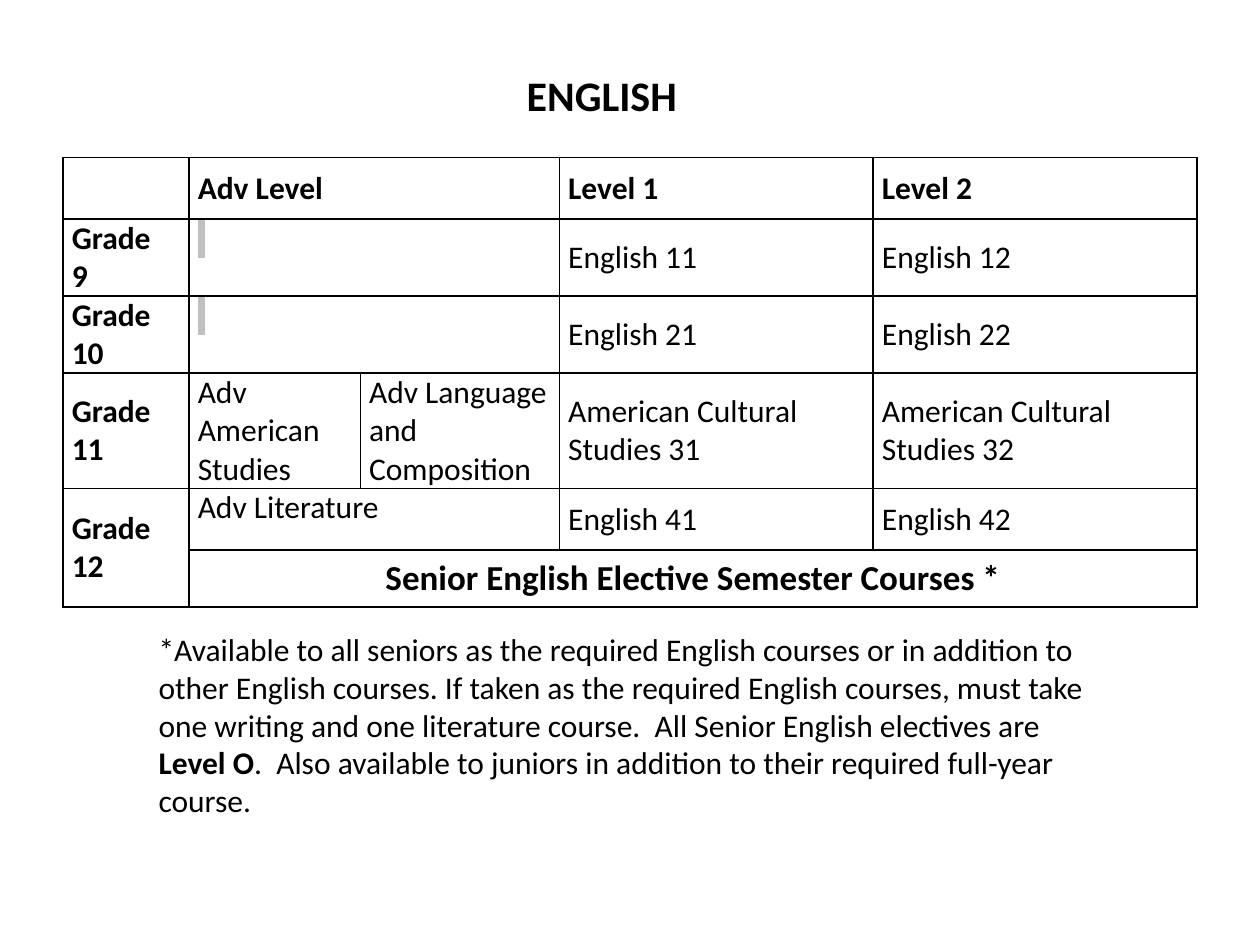
import pptx
import pptx.util
import pptx.dml.color
import pptx.enum.text
from lxml import etree

Inches, Pt = pptx.util.Inches, pptx.util.Pt
ALIGN, ANCHOR = pptx.enum.text.PP_ALIGN, pptx.enum.text.MSO_ANCHOR
DRAWING = "http://schemas.openxmlformats.org/drawingml/2006/main"

# Content
COLORS = {"ink": "000000", "marker": "C0C0C0"}
FONT = "Calibri"
TITLE = "ENGLISH"
MARKED = " "  # a highlighted blank for grades without advanced courses
ADVANCED_LITERATURE = "Adv Literature"
ELECTIVES = "Senior English Elective Semester Courses *"
COURSES = [
    ["", "Adv Level", None, "Level 1", "Level 2"],
    ["Grade  9", MARKED, None, "English 11", "English 12"],
    ["Grade 10", MARKED, None, "English 21", "English 22"],
    ["Grade 11", "Adv American Studies", "Adv Language and Composition",
     "American Cultural Studies 31", "American Cultural Studies 32"],
    ["Grade 12", ADVANCED_LITERATURE, None, "English 41", "English 42"],
    [None, ELECTIVES, None, None, None],
]
MERGES = [((row, 1), (row, 2)) for row in (0, 1, 2, 4)]
MERGES += [((4, 0), (5, 0)), ((5, 1), (5, 4))]
TOP_CELLS = (MARKED, ADVANCED_LITERATURE)
NOTE = [
    ("*Available to all seniors as the required English courses or in addition "
     "to other English courses. If taken as the required English courses, must "
     "take one writing and one literature course.  All Senior English electives are ", False),
    ("Level O", True),
    (".  Also available to juniors in addition to their required full-year course.", False),
]

# Layout in inches
COLUMNS = [1, 1.36, 1.58, 2.49, 2.57]
ROWS = [0.49, 0.46, 0.46, 0.9, 0.49, 0.45]
TABLE_LEFT, TABLE_TOP = 0.5, 1.25
TITLE_BOX = (4.08, 0.5, 1.58, 0.5)
NOTE_BOX = (1.16, 4.94, 7.69, 1.62)


def style(font, size, bold=None):
    font.name, font.size, font.bold = FONT, Pt(size), bold
    font.color.rgb = pptx.dml.color.RGBColor.from_string(COLORS["ink"])


def add_color(parent, tag, color):
    holder = etree.SubElement(parent, f"{{{DRAWING}}}{tag}")
    etree.SubElement(holder, f"{{{DRAWING}}}srgbClr", val=color)
    return holder


def add_borders(cell):
    properties = cell._tc.get_or_add_tcPr()
    for index, side in enumerate(("lnL", "lnR", "lnT", "lnB")):
        line = etree.Element(f"{{{DRAWING}}}{side}", w=str(Pt(1)))
        add_color(line, "solidFill", COLORS["ink"])
        properties.insert(index, line)


def fill_cell(cell, text, bold):
    cell.margin_left = cell.margin_right = Inches(0.07)
    cell.margin_top = cell.margin_bottom = 0
    cell.vertical_anchor = ANCHOR.TOP if text in TOP_CELLS else ANCHOR.MIDDLE
    cell.fill.background()
    add_borders(cell)
    paragraph = cell.text_frame.paragraphs[0]
    style(paragraph.font, 20 if text == ELECTIVES else 18, bold)
    if text == ELECTIVES:
        paragraph.alignment = ALIGN.CENTER
    if text:
        run = paragraph.add_run()
        run.text = text
        if text == MARKED:
            style(run.font, 18)
            fill = run.font._element.find(f"{{{DRAWING}}}solidFill")
            fill.addnext(add_color(run.font._element, "highlight", COLORS["marker"]))


def add_title(slide):
    title = slide.shapes.title
    title.left, title.top, title.width, title.height = map(Inches, TITLE_BOX)
    frame = title.text_frame
    frame.text = TITLE
    frame.word_wrap = False
    frame.vertical_anchor = ANCHOR.TOP
    paragraph = frame.paragraphs[0]
    paragraph.alignment = ALIGN.LEFT
    style(paragraph.font, 24, True)


def add_courses(slide):
    table = slide.shapes.add_table(
        len(ROWS), len(COLUMNS), Inches(TABLE_LEFT), Inches(TABLE_TOP),
        Inches(sum(COLUMNS)), Inches(sum(ROWS))).table
    table.first_row = table.horz_banding = False
    for column, width in zip(table.columns, COLUMNS):
        column.width = Inches(width)
    for row, height in zip(table.rows, ROWS):
        row.height = Inches(height)
    for first, last in MERGES:
        table.cell(*first).merge(table.cell(*last))
    for r, texts in enumerate(COURSES):
        for c, text in enumerate(texts):
            fill_cell(table.cell(r, c), text, r == 0 or c == 0 or text == ELECTIVES)


def add_note(slide):
    frame = slide.shapes.add_textbox(*map(Inches, NOTE_BOX)).text_frame
    frame.word_wrap = True
    frame.vertical_anchor = ANCHOR.MIDDLE
    paragraph = frame.paragraphs[0]
    style(paragraph.font, 18)
    for text, bold in NOTE:
        run = paragraph.add_run()
        run.text, run.font.bold = text, bold


def main():
    presentation = pptx.Presentation()
    presentation.slide_width, presentation.slide_height = Inches(10), Inches(7.5)
    slide = presentation.slides.add_slide(presentation.slide_layouts[5])
    add_title(slide)
    add_courses(slide)
    add_note(slide)
    presentation.save("out.pptx")


if __name__ == "__main__":
    main()
